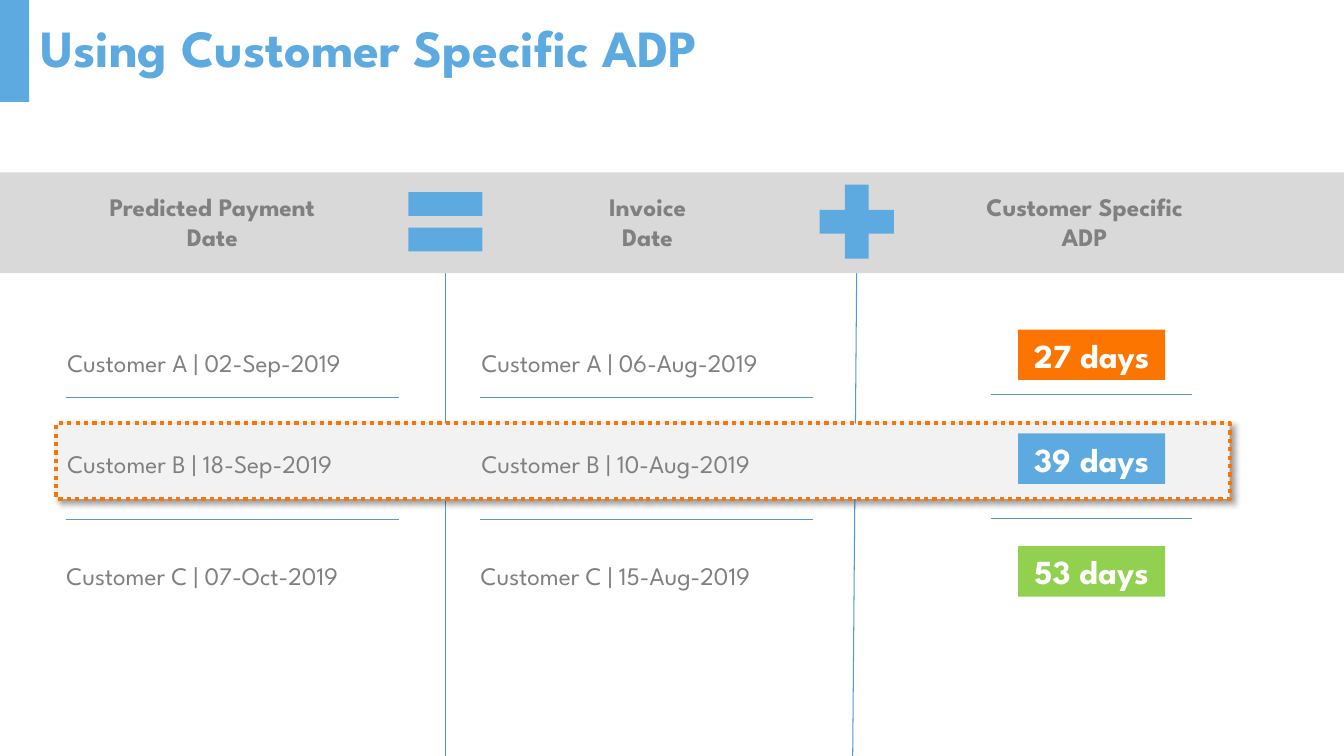
"""Build the slide on predicting payment dates from a customer-specific ADP."""
from dataclasses import dataclass

import lxml.etree
import pptx
import pptx.dml.color
import pptx.enum.dml
import pptx.enum.shapes
import pptx.enum.text
import pptx.oxml
import pptx.oxml.ns
import pptx.shapes.autoshape
import pptx.slide
import pptx.util

Pt = pptx.util.Pt
Align = pptx.enum.text.PP_ALIGN
Preset = pptx.enum.shapes.MSO_SHAPE

FONT = "League Spartan"
COLORS = {
    "blue": "5DAAE0",
    "rule": "5698D3",
    "orange": "FC7500",
    "green": "92D050",
    "band": "D9D9D9",
    "highlight": "F2F2F2",
    "text": "808080",
    "white": "FFFFFF",
}
SHADOW = (
    f'<a:effectLst {pptx.oxml.ns.nsdecls("a")}>'
    f'<a:outerShdw blurRad="{Pt(4)}" dist="{Pt(3)}" dir="2700000" algn="tl" rotWithShape="0">'
    '<a:srgbClr val="000000"><a:alpha val="40000"/></a:srgbClr>'
    "</a:outerShdw></a:effectLst>"
)


@dataclass(frozen=True)
class Box:
    left: float
    top: float
    width: float
    height: float

    def lengths(self) -> list[pptx.util.Length]:
        return [Pt(value) for value in (self.left, self.top, self.width, self.height)]


@dataclass(frozen=True)
class Header:
    lines: tuple[str, str]
    left: float
    width: float
    first_alignment: Align = Align.CENTER


@dataclass(frozen=True)
class Badge:
    text: str
    top: float
    color: str


@dataclass(frozen=True)
class DateColumn:
    left: float
    dates: tuple[str, str, str]


@dataclass(frozen=True)
class Line:
    start_x: float
    start_y: float
    end_x: float
    end_y: float


HEADERS = (
    Header(("Predicted Payment", "Date"), 71.3, 182.2, Align.LEFT),
    Header(("Invoice", "Date"), 422.6, 79.9),
    Header(("Customer Specific", "ADP"), 687.6, 174.2),
)
OPERATORS = ((Preset.MATH_EQUAL, 282.2), (Preset.MATH_PLUS, 576))
BADGES = (
    Badge("27 days", 235.4, "orange"),
    Badge("39 days", 309.6, "blue"),
    Badge("53 days", 390.2, "green"),
)
DATE_COLUMNS = (
    DateColumn(41, ("02-Sep-2019", "18-Sep-2019", "07-Oct-2019")),
    DateColumn(336.9, ("06-Aug-2019", "10-Aug-2019", "15-Aug-2019")),
)
CUSTOMER_ROWS = (("A", 244.8, 0), ("B", 316.8, 0), ("C", 396.7, -0.6))
DIVIDERS = (Line(612, 185, 609.1, 540), Line(318.2, 179.3, 318.2, 540))
DATE_RULE_TOPS = (283.7, 370.8)
BADGE_RULES = tuple(Line(707.8, top, 851.8, top) for top in (281.5, 370.1))


def rgb(color: str) -> pptx.dml.color.RGBColor:
    return pptx.dml.color.RGBColor.from_string(COLORS[color])


def add_block(slide: pptx.slide.Slide, preset: Preset, box: Box, color: str) -> pptx.shapes.autoshape.Shape:
    shape = slide.shapes.add_shape(preset, *box.lengths())
    shape.shadow.inherit = False
    shape.fill.solid()
    shape.fill.fore_color.rgb = rgb(color)
    shape.line.fill.background()
    return shape


def add_line(slide: pptx.slide.Slide, line: Line) -> None:
    connector = slide.shapes.add_connector(
        pptx.enum.shapes.MSO_CONNECTOR.STRAIGHT,
        Pt(line.start_x), Pt(line.start_y), Pt(line.end_x), Pt(line.end_y),
    )
    connector.line.color.rgb = rgb("rule")
    connector.line.width = Pt(0.75)
    properties = connector._element.spPr
    lxml.etree.SubElement(properties, pptx.oxml.ns.qn("a:effectLst"))


def write_text(
    shape: pptx.shapes.autoshape.Shape,
    lines: tuple[str, ...],
    alignments: tuple[Align, ...],
    size: float,
    color: str,
    bold: bool,
) -> None:
    frame = shape.text_frame
    frame.word_wrap = False
    frame.auto_size = pptx.enum.text.MSO_AUTO_SIZE.SHAPE_TO_FIT_TEXT
    frame.text = "\n".join(lines)
    for paragraph, alignment in zip(frame.paragraphs, alignments):
        paragraph.alignment = alignment
        paragraph.font.name = FONT
        paragraph.font.size = Pt(size)
        paragraph.font.bold = bold
        paragraph.font.color.rgb = rgb(color)


def add_highlight(slide: pptx.slide.Slide) -> None:
    highlight = add_block(slide, Preset.RECTANGLE, Box(40.3, 302.4, 838.1, 54), "highlight")
    highlight.line.color.rgb = rgb("orange")
    highlight.line.width = Pt(3)
    highlight.line.dash_style = pptx.enum.dml.MSO_LINE.ROUND_DOT
    properties = highlight._element.spPr
    properties.remove(properties.find(pptx.oxml.ns.qn("a:effectLst")))
    properties.append(pptx.oxml.parse_xml(SHADOW))


def add_title(slide: pptx.slide.Slide) -> None:
    title = slide.shapes.add_textbox(*Box(21.6, 0, 828, 72).lengths())
    write_text(title, ("Using Customer Specific ADP",), (Align.LEFT,), 37.3, "blue", True)
    title.text_frame.word_wrap = True
    title.text_frame.auto_size = pptx.enum.text.MSO_AUTO_SIZE.NONE
    title.text_frame.vertical_anchor = pptx.enum.text.MSO_ANCHOR.MIDDLE
    title.text_frame.paragraphs[0].line_spacing = 0.9


def add_date_column(slide: pptx.slide.Slide, column: DateColumn) -> None:
    for (customer, top, shift), date in zip(CUSTOMER_ROWS, column.dates):
        label = slide.shapes.add_textbox(*Box(column.left + shift, top, 247, 28.8).lengths())
        write_text(label, (f"Customer {customer} | {date}",), (Align.LEFT,), 18, "text", False)
    for top in DATE_RULE_TOPS:
        add_line(slide, Line(column.left + 5.8, top, column.left + 244.1, top))


def main() -> None:
    presentation = pptx.Presentation()
    presentation.slide_width = Pt(960)
    presentation.slide_height = Pt(540)
    slide = presentation.slides.add_slide(presentation.slide_layouts[6])

    add_block(slide, Preset.RECTANGLE, Box(0, 0, 20.9, 72.7), "blue")
    for divider in DIVIDERS:
        add_line(slide, divider)
    add_highlight(slide)
    add_block(slide, Preset.RECTANGLE, Box(0, 123.1, 960, 72), "band")
    add_title(slide)
    for header in HEADERS:
        label = slide.shapes.add_textbox(*Box(header.left, 133.2, header.width, 51.1).lengths())
        write_text(label, header.lines, (header.first_alignment, Align.CENTER), 18, "text", True)
    for preset, left in OPERATORS:
        add_block(slide, preset, Box(left, 122.4, 72, 72), "blue")
    for badge in BADGES:
        shape = add_block(slide, Preset.RECTANGLE, Box(727.2, badge.top, 105.1, 36), badge.color)
        write_text(shape, (badge.text,), (Align.CENTER,), 24, "white", True)
    for rule in BADGE_RULES:
        add_line(slide, rule)
    for column in DATE_COLUMNS:
        add_date_column(slide, column)

    presentation.save("out.pptx")


if __name__ == "__main__":
    main()
